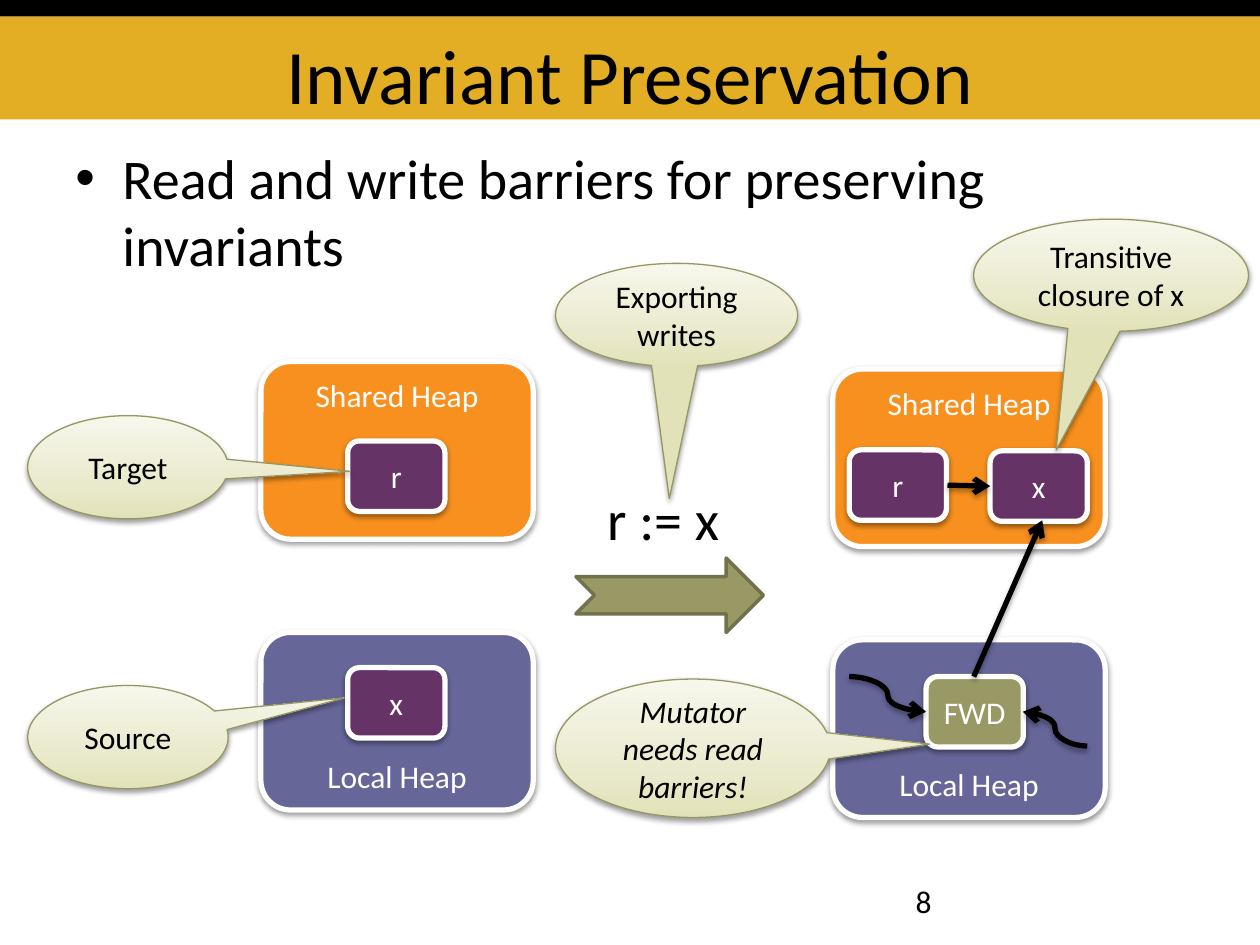
from dataclasses import dataclass

from lxml.etree import SubElement
from pptx import Presentation
from pptx.dml.color import RGBColor
from pptx.enum.shapes import MSO_CONNECTOR as Link, MSO_SHAPE as Kind
from pptx.enum.text import MSO_ANCHOR as Anchor, PP_ALIGN as Align
from pptx.oxml.ns import qn
from pptx.util import Cm, Pt


@dataclass(frozen=True)
class Theme:
    """Colours, font and type sizes of the slide."""
    font: str = "Calibri"
    black: str = "000000"
    white: str = "FFFFFF"
    gold: str = "E3AE24"
    shared: str = "F7901E"
    local: str = "666699"
    plum: str = "663366"
    olive: str = "999966"
    moss: str = "71714B"
    rim: str = "979763"
    cream: tuple = ((0, "E2E2B9"), (35, "EAEACE"), (100, "F7F7EC"))
    title: int = 44
    body: int = 32
    label: int = 18


THEME = Theme()


def box(at):
    """Turn centimetres into lengths."""
    return [Cm(n) for n in at]


def paint(fill, tone):
    """Set a solid fill."""
    fill.solid()
    fill.fore_color.rgb = RGBColor.from_string(tone)


def edge(line, tone, width):
    """Set the colour and width of a line."""
    paint(line.fill, tone)
    line.width = Pt(width)


def shade(shape, alpha=38, gap=1.6):
    """Cast a soft shadow straight down."""
    props = shape._element.spPr
    effects = props.find(qn("a:effectLst"))
    if effects is None:
        effects = SubElement(props, qn("a:effectLst"))
    cast = SubElement(effects, qn("a:outerShdw"), blurRad=str(Pt(3.1)),
                      dist=str(Pt(gap)), dir="5400000", rotWithShape="0")
    tone = SubElement(cast, qn("a:srgbClr"), val=THEME.black)
    SubElement(tone, qn("a:alpha"), val=str(alpha * 1000))


def blend(shape, stops):
    """Fill a shape with a gradient that rises from its foot."""
    shape.fill.gradient()
    shape.fill.gradient_angle = 90
    track = shape._element.spPr.find(qn("a:gradFill")).find(qn("a:gsLst"))
    for stop in list(track):
        track.remove(stop)
    for place, tone in stops:
        stop = SubElement(track, qn("a:gs"), pos=str(place * 1000))
        SubElement(stop, qn("a:srgbClr"), val=tone)


def write(shape, words, size, tone, align=Align.CENTER, anchor=Anchor.MIDDLE,
          slant=False, wrap=True):
    """Put one run of text in a shape."""
    frame = shape.text_frame
    frame.word_wrap = wrap
    frame.vertical_anchor = anchor
    para = frame.paragraphs[0]
    para.alignment = align
    run = para.add_run()
    run.text = words
    font = run.font
    font.name, font.size, font.italic = THEME.font, Pt(size), slant
    font.color.rgb = RGBColor.from_string(tone)
    return frame


def add_shape(slide, kind, at, tone=None):
    """Draw a plain shape with no line or shadow."""
    shape = slide.shapes.add_shape(kind, *box(at))
    shape.shadow.inherit = False
    shape.line.fill.background()
    if tone:
        paint(shape.fill, tone)
    return shape


def add_text(slide, at, words, size, align=Align.LEFT, anchor=Anchor.TOP, wrap=True):
    """Draw a text box and return its frame."""
    shape = slide.shapes.add_textbox(*box(at))
    return write(shape, words, size, THEME.black, align, anchor, wrap=wrap)


def add_block(slide, at, words, tone, anchor=Anchor.MIDDLE):
    """Draw a round block with a white rim."""
    block = add_shape(slide, Kind.ROUNDED_RECTANGLE, at, tone)
    edge(block.line, THEME.white, 3)
    shade(block)
    write(block, words, THEME.label, THEME.white, anchor=anchor)


def add_heaps(slide, left, top):
    """Draw a shared heap above a local heap."""
    size = (5.49, 3.58)
    add_block(slide, (left, top, *size), "Shared Heap", THEME.shared, Anchor.TOP)
    add_block(slide, (left, top + 5.46, *size), "Local Heap", THEME.local, Anchor.BOTTOM)


def add_cell(slide, left, top, words, tone=THEME.plum):
    """Draw one heap cell."""
    add_block(slide, (left, top, 1.96, 1.42), words, tone)


def add_note(slide, at, tip, words, slant=False):
    """Draw an oval callout that points at its tip."""
    note = add_shape(slide, Kind.OVAL_CALLOUT, at)
    note.adjustments[0], note.adjustments[1] = tip
    blend(note, THEME.cream)
    edge(note.line, THEME.rim, 0.75)
    shade(note)
    write(note, words, THEME.label, THEME.black, slant=slant)


def add_link(slide, ends, kind=Link.STRAIGHT):
    """Draw a black arrow."""
    link = slide.shapes.add_connector(kind, *box(ends))
    edge(link.line, THEME.black, 3)
    SubElement(link.line._ln, qn("a:tailEnd"), type="arrow")
    shade(link, 35, 1.8)


def add_head(slide):
    """Draw the title band, the bullet and the page number."""
    add_shape(slide, Kind.RECTANGLE, (0, 0.33, 25.4, 2.08), THEME.gold)
    add_shape(slide, Kind.RECTANGLE, (0, 0, 25.4, 0.33), THEME.black)
    title = add_text(slide, (1.27, 0.33, 22.86, 2.08), "Invariant Preservation",
                     THEME.title, Align.CENTER, Anchor.BOTTOM)
    title.margin_bottom = 0
    body = add_text(slide, (1.27, 2.77, 22.86, 4.17),
                    "Read and write barriers for preserving invariants", THEME.body)
    props = body.paragraphs[0]._p.get_or_add_pPr()
    props.set("marL", str(Cm(0.95)))
    props.set("indent", str(-Cm(0.95)))
    SubElement(props, qn("a:buFont"), typeface="Arial")
    SubElement(props, qn("a:buChar"), char="•")
    add_text(slide, (18.21, 17.65, 5.92, 1.02), "8", THEME.label)


def add_start(slide):
    """Draw the heaps before the write."""
    add_heaps(slide, 5.26, 7.29)
    add_cell(slide, 7.01, 8.89, "r")
    add_cell(slide, 7.01, 13.46, "x")
    add_note(slide, (0.56, 8.38, 4.04, 2.08), (1.11, 0.04), "Target")
    add_note(slide, (0.56, 13.82, 4.04, 2.08), (1.08, -0.38), "Source")


def add_step(slide):
    """Draw the write itself."""
    add_note(slide, (11.2, 5.31, 4.88, 2.08), (-0.03, 1.78), "Exporting writes")
    add_text(slide, (11.99, 9.65, 2.79, 1.63), "r := x", THEME.body, wrap=False)
    arrow = add_shape(slide, Kind.NOTCHED_RIGHT_ARROW, (11.61, 11.25, 3.78, 1.5), THEME.olive)
    edge(arrow.line, THEME.moss, 2)


def add_end(slide):
    """Draw the heaps after the write."""
    add_heaps(slide, 16.79, 7.44)
    add_cell(slide, 17.12, 9.07, "r")
    add_cell(slide, 19.96, 9.09, "x")
    add_link(slide, (19.1, 9.78, 19.96, 9.8))
    add_cell(slide, 18.67, 13.64, "FWD", THEME.olive)
    add_link(slide, (17.12, 13.64, 18.67, 14.35), Link.CURVE)
    add_link(slide, (21.92, 15.04, 20.62, 14.35), Link.CURVE)
    add_link(slide, (19.63, 13.64, 21.01, 10.49))
    add_note(slide, (19.63, 4.42, 5.54, 2.26), (-0.2, 1.56), "Transitive closure of x")
    add_note(slide, (11.2, 13.69, 5.54, 2.79), (0.86, -0.03),
             "Mutator needs read barriers!", slant=True)


def main():
    """Build and save the slide."""
    deck = Presentation()
    deck.slide_width, deck.slide_height = Cm(25.4), Cm(19.05)
    slide = deck.slides.add_slide(deck.slide_layouts[6])
    for part in (add_head, add_start, add_step, add_end):
        part(slide)
    deck.save("out.pptx")


if __name__ == "__main__":
    main()
